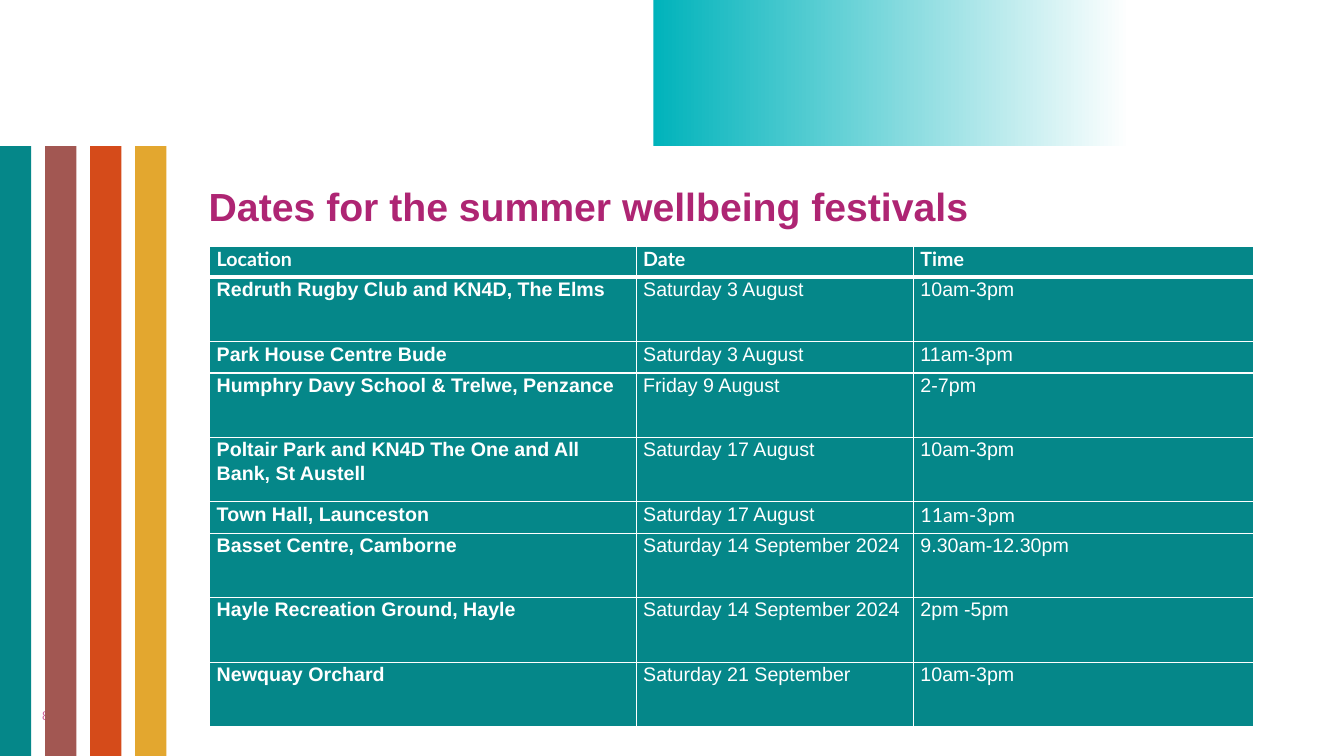
from lxml import etree
from pptx import Presentation
from pptx.dml.color import RGBColor
from pptx.enum.shapes import MSO_SHAPE
from pptx.enum.text import MSO_ANCHOR, PP_ALIGN
from pptx.oxml.ns import qn
from pptx.util import Inches, Pt

RECT = MSO_SHAPE.RECTANGLE
MIDDLE, TOP = MSO_ANCHOR.MIDDLE, MSO_ANCHOR.TOP
LEFT = PP_ALIGN.LEFT

WHITE = RGBColor(0xFF, 0xFF, 0xFF)
TEAL = RGBColor(0x05, 0x87, 0x89)
AQUA = RGBColor(0x00, 0xB3, 0xBB)
MAUVE = RGBColor(0xA2, 0x57, 0x52)
ORANGE = RGBColor(0xD5, 0x4B, 0x1A)
GOLD = RGBColor(0xE3, 0xA7, 0x2F)
MAGENTA = RGBColor(0xAE, 0x25, 0x73)
PINK = RGBColor(0xCC, 0x62, 0x9B)

BAND_H = 1.45
COL_W = [4.23, 2.75, 3.37]
TALL, SHORT = 0.64, 0.31
FESTIVALS = [
    (SHORT, "Location", "Date", "Time"),
    (TALL, "Redruth Rugby Club and KN4D, The Elms", "Saturday 3 August", "10am-3pm"),
    (SHORT, "Park House Centre Bude", "Saturday 3 August", "11am-3pm"),
    (TALL, "Humphry Davy School & Trelwe, Penzance", "Friday 9 August", "2-7pm"),
    (TALL, "Poltair Park and KN4D The One and All Bank, St Austell",
     "Saturday 17 August", "10am-3pm"),
    (SHORT, "Town Hall, Launceston", "Saturday 17 August", "11am-3pm"),
    (TALL, "Basset Centre, Camborne", "Saturday 14 September 2024", "9.30am-12.30pm"),
    (TALL, "Hayle Recreation Ground, Hayle", "Saturday 14 September 2024", "2pm -5pm"),
    (TALL, "Newquay Orchard", "Saturday 21 September", "10am-3pm"),
]
LATO_CELLS = {(0, 0), (0, 1), (0, 2), (5, 2)}


def set_attrs(obj, **values):
    for name, value in values.items():
        setattr(obj, name, value)


def write(p, text, size, color, bold=False, font="Arial"):
    r = p.add_run()
    r.text = text
    set_attrs(r.font, size=Pt(size), bold=bold, name=font)
    r.font.color.rgb = color


def add_rect(s, x, y, w, h):
    sp = s.shapes.add_shape(RECT, Inches(x), Inches(y), Inches(w), Inches(h))
    sp.shadow.inherit = False
    sp.line.fill.background()
    return sp


def add_band(s, x, y, w, h):
    """Band fading from aqua to white."""
    fill = add_rect(s, x, y, w, h).fill
    fill.gradient()
    fill.gradient_angle = 0
    for stop, color, position in zip(fill.gradient_stops, (AQUA, WHITE), (0, 1)):
        stop.color.rgb = color
        stop.position = position


def add_page_number(s, x, y, w, h):
    tf = s.shapes.add_textbox(Inches(x), Inches(y), Inches(w), Inches(h)).text_frame
    tf.word_wrap = True
    write(tf.paragraphs[0], "8", 9, PINK)


def add_stripes(s, x, y, w, h):
    """Four upright stripes, evenly spread over the box."""
    colors = [TEAL, MAUVE, ORANGE, GOLD]
    stripe_w = 0.31
    step = (w - stripe_w) / (len(colors) - 1)
    for i, color in enumerate(colors):
        fill = add_rect(s, x + i * step, y, stripe_w, h).fill
        fill.solid()
        fill.fore_color.rgb = color


def add_title(s, x, y, w, h):
    sp = s.shapes.title
    set_attrs(sp, left=Inches(x), top=Inches(y), width=Inches(w), height=Inches(h))
    tf = sp.text_frame
    set_attrs(tf, word_wrap=True, vertical_anchor=MIDDLE)
    p = tf.paragraphs[0]
    p.alignment = LEFT
    write(p, "Dates for the summer wellbeing festivals", 28, MAGENTA, True)


def add_borders(cell, widths):
    tcPr = cell._tc.get_or_add_tcPr()
    for side, width in widths.items():
        ln = etree.SubElement(tcPr, qn("a:" + side), w=str(Pt(width)))
        fill = etree.SubElement(ln, qn("a:solidFill"))
        etree.SubElement(fill, qn("a:srgbClr"), val=str(WHITE))


def format_cell(cell, text, row, col):
    set_attrs(cell, margin_left=Inches(0.07), margin_right=Inches(0.07),
              margin_top=0, margin_bottom=0, vertical_anchor=TOP)
    add_borders(cell, {"lnL": 1, "lnR": 1, "lnT": 3 if row == 1 else 1,
                       "lnB": 3 if row == 0 else 1})
    cell.fill.solid()
    cell.fill.fore_color.rgb = TEAL
    p = cell.text_frame.paragraphs[0]
    set_attrs(p, line_spacing=1.07, space_after=Pt(8), alignment=LEFT)
    font = "Lato" if (row, col) in LATO_CELLS else "Arial"
    write(p, text, 14, WHITE, row == 0 or col == 0, font)


def add_festival_table(s, x, y, w, h):
    table = s.shapes.add_table(len(FESTIVALS), len(COL_W), Inches(x), Inches(y),
                               Inches(w), Inches(h)).table
    for column, width in zip(table.columns, COL_W):
        column.width = Inches(width)
    for i, (height, *texts) in enumerate(FESTIVALS):
        table.rows[i].height = Inches(height)
        for j, text in enumerate(texts):
            format_cell(table.cell(i, j), text, i, j)


def main():
    prs = Presentation()
    prs.slide_width, prs.slide_height = Inches(13.33), Inches(7.5)
    s = prs.slides.add_slide(prs.slide_layouts[5])
    add_band(s, 6.48, 0, 4.73, BAND_H)
    add_page_number(s, 0.32, 6.97, 0.71, 0.25)
    add_stripes(s, 0, BAND_H, 1.65, 7.5 - BAND_H)
    add_title(s, 1.97, 1.65, 9.61, 0.79)
    add_festival_table(s, 2.08, 2.44, sum(COL_W), sum(row[0] for row in FESTIVALS))
    prs.save("out.pptx")


if __name__ == "__main__":
    main()
